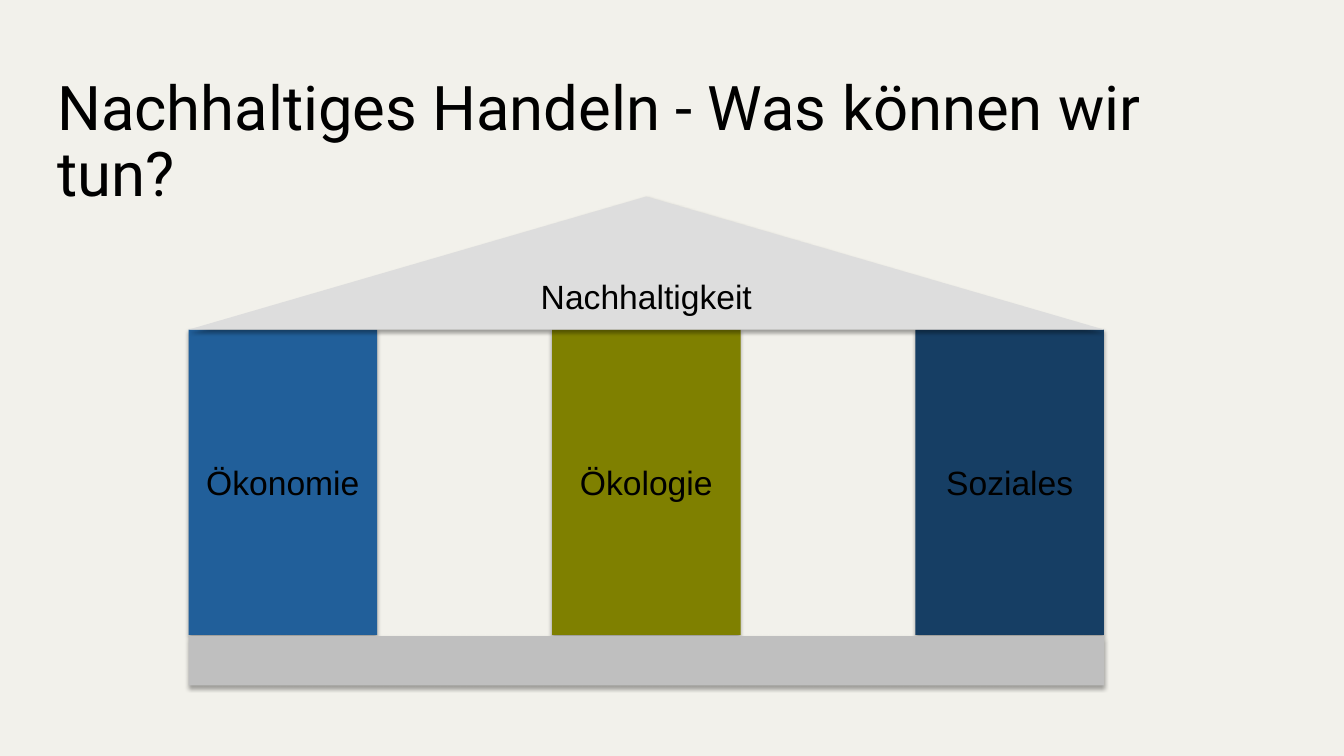
import lxml.etree
import pptx
import pptx.dml.color
import pptx.enum.shapes
import pptx.enum.text
import pptx.oxml.ns
import pptx.util

Inches = pptx.util.Inches
Pt = pptx.util.Pt
SHAPE = pptx.enum.shapes.MSO_SHAPE
MIDDLE = pptx.enum.text.MSO_ANCHOR.MIDDLE
CENTER = pptx.enum.text.PP_ALIGN.CENTER

HOUSE_LEFT, HOUSE_WIDTH = 1.87, 9.08
ROOF_TOP, ROOF_HEIGHT = 1.95, 1.32
PILLAR_TOP, PILLAR_WIDTH, PILLAR_HEIGHT = 3.27, 1.87, 3.03
BASE_TOP, BASE_HEIGHT = 6.31, 0.49
PILLARS = [("Ökonomie", "215F9A"), ("Ökologie", "7F8000"), ("Soziales", "163E64")]


def color(hex_code):
    return pptx.dml.color.RGBColor.from_string(hex_code)


def add_run(paragraph, text, size, font_name):
    run = paragraph.add_run()
    run.text = text
    run.font.size = Pt(size)
    run.font.name = font_name
    run.font.color.rgb = color("000000")


def add_shadow(part):
    """Give the part a soft shadow that falls straight down."""
    part.shadow.inherit = False
    qn = pptx.oxml.ns.qn
    effects = part.element.spPr.find(qn("a:effectLst"))
    shadow = lxml.etree.SubElement(
        effects, qn("a:outerShdw"), blurRad=str(Pt(3.1)), dist=str(Pt(1.8)),
        dir="5400000", rotWithShape="0")
    shade = lxml.etree.SubElement(shadow, qn("a:srgbClr"), val="000000")
    lxml.etree.SubElement(shade, qn("a:alpha"), val="35000")


def add_title(slide, text):
    title = slide.shapes.add_textbox(
        Inches(0.47), Inches(0.7), Inches(11.5), Inches(1.45))
    frame = title.text_frame
    frame.word_wrap = True
    frame.vertical_anchor = MIDDLE
    paragraph = frame.paragraphs[0]
    paragraph.line_spacing = 0.9
    add_run(paragraph, text, 44, "Roboto")


def add_house_part(slide, outline, left, top, width, height, fill, label=None):
    part = slide.shapes.add_shape(
        outline, Inches(left), Inches(top), Inches(width), Inches(height))
    part.fill.solid()
    part.fill.fore_color.rgb = color(fill)
    part.line.fill.background()
    add_shadow(part)
    if label:
        frame = part.text_frame
        frame.word_wrap = False
        frame.vertical_anchor = MIDDLE
        paragraph = frame.paragraphs[0]
        paragraph.alignment = CENTER
        add_run(paragraph, label, 24, "Arial")


def main():
    deck = pptx.Presentation()
    deck.slide_width = Inches(13.33)
    deck.slide_height = Inches(7.5)
    slide = deck.slides.add_slide(deck.slide_layouts[6])
    slide.background.fill.solid()
    slide.background.fill.fore_color.rgb = color("F2F1EB")

    add_title(slide, "Nachhaltiges Handeln - Was können wir tun?")
    pillar_step = (HOUSE_WIDTH - PILLAR_WIDTH) / (len(PILLARS) - 1)
    for index, (label, fill) in enumerate(PILLARS):
        add_house_part(slide, SHAPE.RECTANGLE, HOUSE_LEFT + index * pillar_step,
                       PILLAR_TOP, PILLAR_WIDTH, PILLAR_HEIGHT, fill, label)
    add_house_part(slide, SHAPE.ISOSCELES_TRIANGLE, HOUSE_LEFT, ROOF_TOP,
                   HOUSE_WIDTH, ROOF_HEIGHT, "DDDDDD", "Nachhaltigkeit")
    add_house_part(slide, SHAPE.RECTANGLE, HOUSE_LEFT, BASE_TOP,
                   HOUSE_WIDTH, BASE_HEIGHT, "BFBFBF")
    deck.save("out.pptx")


if __name__ == "__main__":
    main()
